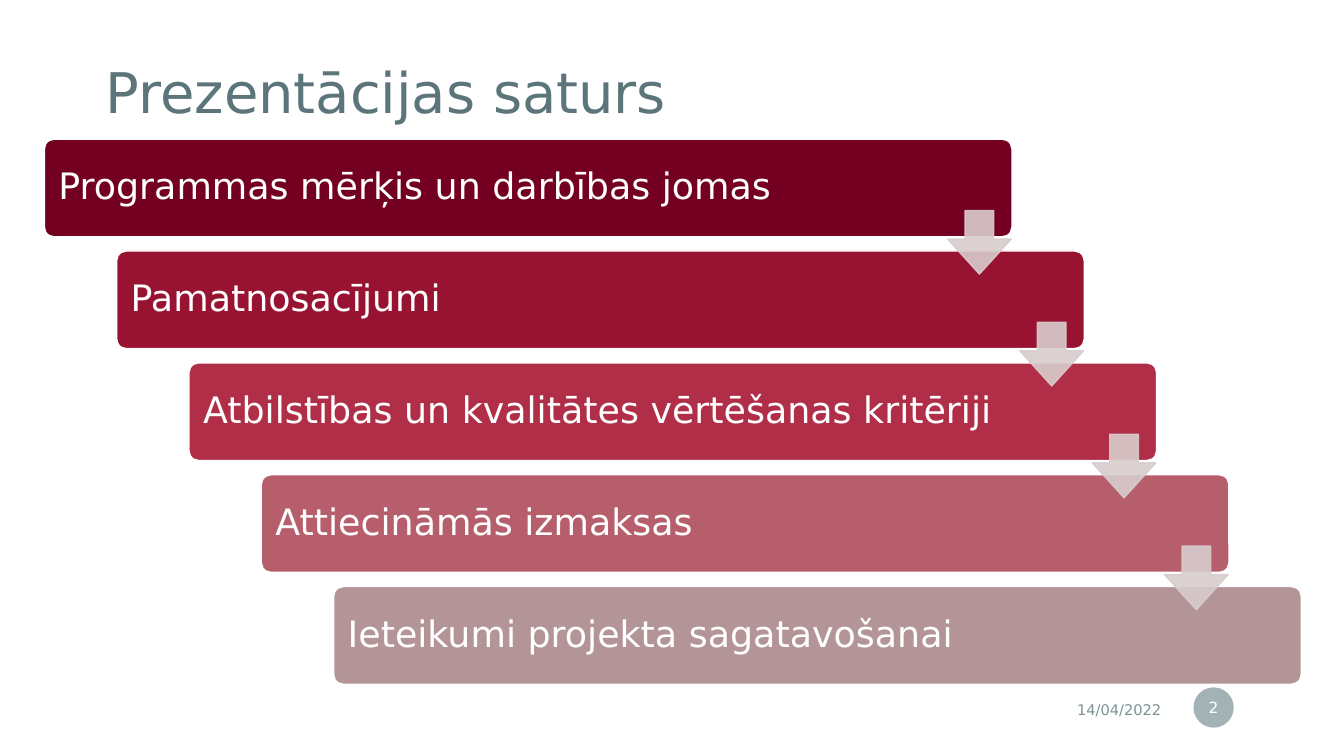
from lxml import etree
from pptx import Presentation
from pptx.dml.color import RGBColor
from pptx.enum.shapes import MSO_SHAPE
from pptx.enum.text import MSO_ANCHOR, PP_ALIGN
from pptx.oxml.ns import qn
from pptx.util import Pt

ROUND_RECT = MSO_SHAPE.ROUNDED_RECTANGLE
DOWN_ARROW = MSO_SHAPE.DOWN_ARROW
OVAL = MSO_SHAPE.OVAL
MIDDLE = MSO_ANCHOR.MIDDLE
LEFT, CENTER, RIGHT = PP_ALIGN.LEFT, PP_ALIGN.CENTER, PP_ALIGN.RIGHT

FONT = "DejaVu Sans"
WHITE = "FFFFFF"
ARROW_COLOR = "D8CCCD"
TOPICS = [
    ("Programmas mērķis un darbības jomas", "740021"),
    ("Pamatnosacījumi", "981231"),
    ("Atbilstības un kvalitātes vērtēšanas kritēriji", "B02E47"),
    ("Attiecināmās izmaksas", "B65E6B"),
    ("Ieteikumi projekta sagatavošanai", "B39598"),
]
BAR_LEFT, BAR_TOP, BAR_WIDTH, BAR_HEIGHT = 31.7, 99.4, 691.2, 69.8
ARROW_LEFT, ARROW_TOP, ARROW_SIZE = 676.9, 150.4, 45.4
STEP_X, STEP_Y = 51.65, 79.9


def color(value):
    """Turn a hex string into a colour."""
    return RGBColor.from_string(value)


def set_text(sp, text, size, text_color, align=LEFT, inset_x=7.2, inset_y=3.6, spacing=1.0):
    """Write one vertically centred paragraph into a shape."""
    tf = sp.text_frame
    tf.word_wrap = True
    tf.vertical_anchor = MIDDLE
    tf.margin_left = tf.margin_right = Pt(inset_x)
    tf.margin_top = tf.margin_bottom = Pt(inset_y)
    p = tf.paragraphs[0]
    p.text = text
    p.alignment = align
    p.line_spacing = spacing
    p.font.name = FONT
    p.font.size = Pt(size)
    p.font.color.rgb = color(text_color)


def add_label(s, box, text, size, text_color, **layout):
    """Add a text box."""
    sp = s.shapes.add_textbox(*map(Pt, box))
    set_text(sp, text, size, text_color, **layout)


def add_figure(s, kind, box, fill, line=None, adjustments=(), opacity=100):
    """Add a filled preset shape with an optional outline and opacity."""
    sp = s.shapes.add_shape(kind, *map(Pt, box))
    sp.shadow.inherit = False
    for i, value in enumerate(adjustments):
        sp.adjustments[i] = value
    sp.fill.solid()
    sp.fill.fore_color.rgb = color(fill)
    if line:
        sp.line.color.rgb = color(line)
        sp.line.width = Pt(1)
    else:
        sp.line.fill.background()
    if opacity < 100:
        for clr in sp._element.spPr.iter(qn("a:srgbClr")):
            etree.SubElement(clr, qn("a:alpha")).set("val", str(opacity * 1000))
    return sp


def add_bar(s, i, text, fill):
    """Add the topic bar at step i of the staircase."""
    box = (BAR_LEFT + i * STEP_X, BAR_TOP + i * STEP_Y, BAR_WIDTH, BAR_HEIGHT)
    sp = add_figure(s, ROUND_RECT, box, fill, WHITE, [0.1])
    set_text(sp, text, 26, WHITE, inset_x=8, inset_y=8, spacing=0.9)


def add_arrow(s, i):
    """Add the arrow leading from step i to the next one."""
    box = (ARROW_LEFT + i * STEP_X, ARROW_TOP + i * STEP_Y, ARROW_SIZE, ARROW_SIZE)
    add_figure(s, DOWN_ARROW, box, ARROW_COLOR, ARROW_COLOR, [0.45, 0.55], 90)


def main():
    """Build the contents slide."""
    prs = Presentation()
    prs.slide_width, prs.slide_height = Pt(960), Pt(540)
    s = prs.slides.add_slide(prs.slide_layouts[6])

    add_label(s, (61.2, 25.2, 604, 85.7), "Prezentācijas saturs", 40, "5B757A",
              inset_x=14.4, inset_y=14.4, spacing=0.9)
    add_label(s, (619.9, 493.9, 216.7, 25.2), "14/04/2022", 10.5, "7C9396", align=RIGHT)
    badge = add_figure(s, OVAL, (852.5, 491, 28.8, 28.8), "7C9396", opacity=70)
    set_text(badge, "2", 11, WHITE, CENTER, inset_x=1.4)

    for i, (text, fill) in enumerate(TOPICS):
        add_bar(s, i, text, fill)
    for i in range(len(TOPICS) - 1):
        add_arrow(s, i)

    prs.save("out.pptx")


if __name__ == "__main__":
    main()
